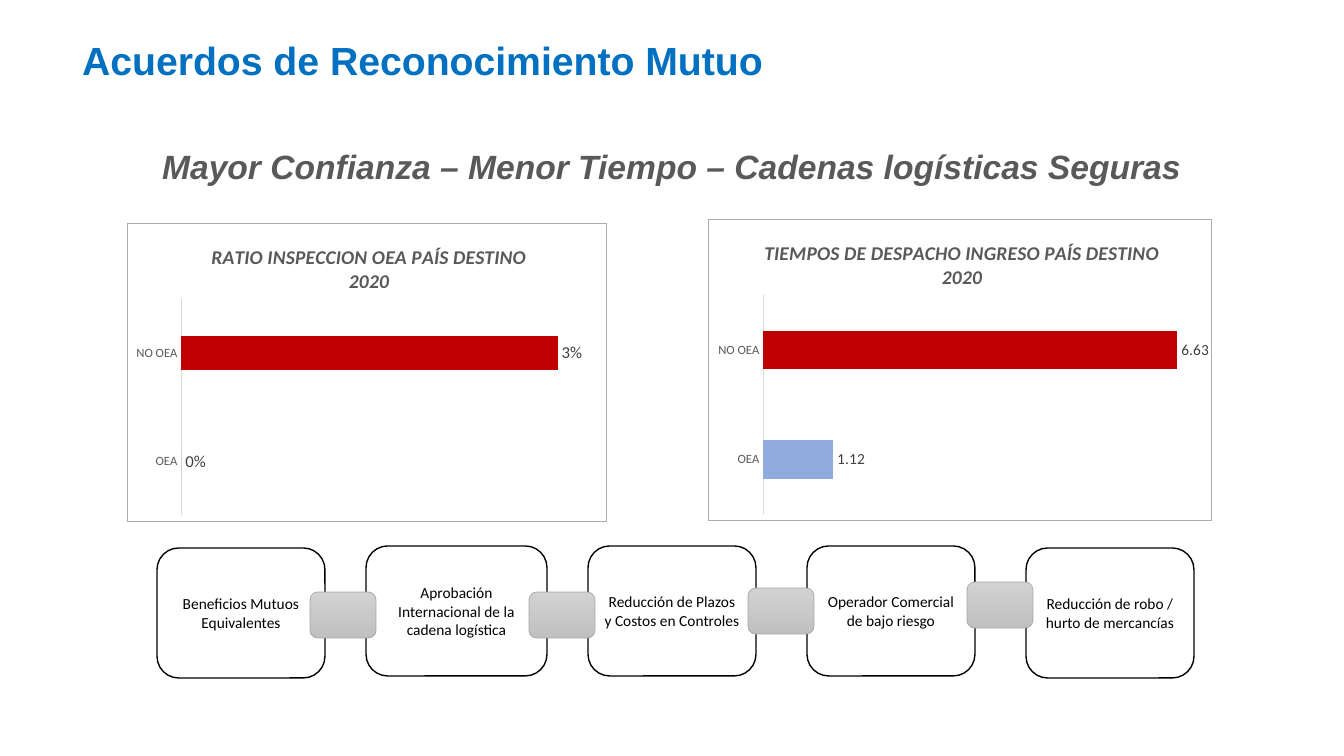
from dataclasses import dataclass

from lxml import etree
from pptx import Presentation
from pptx.chart.data import CategoryChartData
from pptx.dml.color import RGBColor
from pptx.enum.chart import XL_CHART_TYPE, XL_LABEL_POSITION, XL_TICK_MARK
from pptx.enum.shapes import MSO_SHAPE
from pptx.enum.text import MSO_ANCHOR, PP_ALIGN
from pptx.oxml import parse_xml
from pptx.oxml.ns import nsdecls, qn
from pptx.util import Pt

BAR = XL_CHART_TYPE.BAR_CLUSTERED
OUTSIDE = XL_LABEL_POSITION.OUTSIDE_END
NO_TICK = XL_TICK_MARK.NONE
ROUND = MSO_SHAPE.ROUNDED_RECTANGLE
MIDDLE = MSO_ANCHOR.MIDDLE
LEFT, CENTER = PP_ALIGN.LEFT, PP_ALIGN.CENTER

BLACK = RGBColor(0x00, 0x00, 0x00)
WHITE = RGBColor(0xFF, 0xFF, 0xFF)
BLUE = RGBColor(0x00, 0x70, 0xC0)
PALE = RGBColor(0x8F, 0xAA, 0xDC)
RED = RGBColor(0xC0, 0x00, 0x00)
SLATE = RGBColor(0x59, 0x59, 0x59)
DARK = RGBColor(0x40, 0x40, 0x40)
AXIS = RGBColor(0xD9, 0xD9, 0xD9)
FRAME = RGBColor(0xAF, 0xAB, 0xAB)
EDGE = RGBColor(0xA5, 0xA5, 0xA5)
SHADES = RGBColor(0xD2, 0xD2, 0xD2), RGBColor(0xC0, 0xC0, 0xC0)

SCALE = 914400 / 100.8
STEP = 219


@dataclass(frozen=True)
class Area:
    x: int
    y: int
    w: int
    h: int

    def emu(self) -> tuple[int, ...]:
        return tuple(round(n * SCALE) for n in (self.x, self.y, self.w, self.h))


@dataclass(frozen=True)
class Graph:
    area: Area
    plot: Area
    head: tuple[int, int]
    title: str
    values: tuple[float, float]
    top: float
    form: str
    gap: int
    size: int


@dataclass(frozen=True)
class Step:
    text: str
    area: Area


GRAPHS = (
    Graph(Area(127, 223, 480, 299), Area(181, 299, 415, 217), (208, 240),
          "RATIO INSPECCION OEA PAÍS DESTINO\n2020",
          (0, 0.03), 0.033, "0%", 219, 12),
    Graph(Area(708, 219, 504, 302), Area(763, 295, 438, 220), (761, 236),
          "TIEMPOS DE DESPACHO INGRESO PAÍS DESTINO\n2020",
          (1.12, 6.63), 7, "General", 182, 11),
)
STEPS = (
    Step("Beneficios Mutuos Equivalentes", Area(157, 548, 168, 130)),
    Step("Aprobación Internacional de la cadena logística",
         Area(366, 546, 181, 130)),
    Step("Reducción de Plazos y Costos en Controles",
         Area(588, 546, 168, 130)),
    Step("Operador Comercial de bajo riesgo",
         Area(588 + STEP, 546, 168, 130)),
    Step("Reducción de robo / hurto de mercancías",
         Area(588 + 2 * STEP, 548, 168, 130)),
)
LINKS = tuple(Area(310 + i * STEP, y, 66, 46)
              for i, y in enumerate((592, 592, 588, 582)))


def style(font, name: str, size: int, color: RGBColor,
          bold: bool = False, italic: bool = False) -> None:
    font.name, font.size = name, Pt(size)
    font.bold, font.italic = bold, italic
    font.color.rgb = color


def write(shape, text: str, align, *look) -> None:
    """Put one styled paragraph, centred in height, into a shape."""
    frame = shape.text_frame
    frame.word_wrap = True
    frame.vertical_anchor = MIDDLE
    frame.text = text
    para = frame.paragraphs[0]
    para.alignment = align
    for run in para.runs:
        style(run.font, *look)


def place(node, area: Area, x: int, y: int, plot: Area | None = None) -> None:
    """Fix the layout of a chart part as fractions of the chart area."""
    items = [("xMode", "edge"), ("yMode", "edge"),
             ("x", (x - area.x) / area.w), ("y", (y - area.y) / area.h)]
    if plot:
        items.insert(0, ("layoutTarget", "inner"))
        items += [("w", plot.w / area.w), ("h", plot.h / area.h)]
    for old in node.findall(qn("c:layout")):
        node.remove(old)
    layout = etree.Element(qn("c:layout"))
    manual = etree.SubElement(layout, qn("c:manualLayout"))
    for tag, value in items:
        etree.SubElement(manual, qn(f"c:{tag}")).set("val", str(value))
    text = node.find(qn("c:tx"))
    if text is None:
        node.insert(0, layout)
    else:
        text.addnext(layout)


def border(chart) -> None:
    chart.element.find(qn("c:chart")).addnext(parse_xml(
        f'<c:spPr {nsdecls("c", "a")}><a:solidFill><a:srgbClr val="{WHITE}"/>'
        f'</a:solidFill><a:ln w="{Pt(0.75)}"><a:solidFill>'
        f'<a:srgbClr val="{FRAME}"/></a:solidFill></a:ln></c:spPr>'))


def draw_graph(slide, graph: Graph) -> None:
    data = CategoryChartData(number_format=graph.form)
    data.categories = ["OEA", "NO OEA"]
    data.add_series("Series 1", graph.values)
    chart = slide.shapes.add_chart(BAR, *graph.area.emu(), data).chart
    style(chart.font, "Calibri", 10, BLACK)
    border(chart)
    chart.has_legend = False

    title = chart.chart_title
    title.text_frame.text = graph.title
    for para in title.text_frame.paragraphs:
        style(para.runs[0].font, "Calibri", 14, SLATE, True, True)
    place(title._element, graph.area, *graph.head)

    cats, vals = chart.category_axis, chart.value_axis
    cats.major_tick_mark = NO_TICK
    style(cats.tick_labels.font, "Calibri", 9, SLATE)
    cats.format.line.color.rgb = AXIS
    cats.format.line.width = Pt(0.75)
    vals.has_major_gridlines = False
    vals.minimum_scale, vals.maximum_scale = 0, graph.top
    vals.visible = False

    plot = chart.plots[0]
    plot.gap_width = graph.gap
    plot.vary_by_categories = False
    series = plot.series[0]
    for i, color in enumerate((PALE, RED)):
        fill = series.points[i].format.fill
        fill.solid()
        fill.fore_color.rgb = color
    labels = series.data_labels
    labels.show_value = True
    labels.position = OUTSIDE
    labels.number_format = graph.form
    labels.number_format_is_linked = False
    style(labels.font, "Calibri", graph.size, DARK)
    area = chart.element.find(f".//{qn('c:plotArea')}")
    place(area, graph.area, graph.plot.x, graph.plot.y, graph.plot)


def add_box(slide, area: Area, color: RGBColor, width: float):
    box = slide.shapes.add_shape(ROUND, *area.emu())
    box.shadow.inherit = False
    box.line.color.rgb = color
    box.line.width = Pt(width)
    return box


def draw_step(slide, step: Step) -> None:
    box = add_box(slide, step.area, BLACK, 1)
    box.fill.solid()
    box.fill.fore_color.rgb = WHITE
    write(box, step.text, CENTER, "Calibri", 11, BLACK)


def draw_link(slide, area: Area) -> None:
    fill = add_box(slide, area, EDGE, 0.5).fill
    fill.gradient()
    fill.gradient_angle = 270
    for stop, shade in zip(fill.gradient_stops, SHADES):
        stop.color.rgb = shade


def main() -> None:
    deck = Presentation()
    deck.slide_width, deck.slide_height = Area(0, 0, 1344, 756).emu()[2:]
    slide = deck.slides.add_slide(deck.slide_layouts[5])
    title = slide.shapes.title
    title.left, title.top, title.width, title.height = Area(
        72, 39, 727, 48).emu()
    write(title, "Acuerdos de Reconocimiento Mutuo", LEFT,
          "Arial", 28, BLUE, True)
    for graph in GRAPHS:
        draw_graph(slide, graph)
    motto = slide.shapes.add_textbox(*Area(142, 146, 1059, 46).emu())
    write(motto, "Mayor Confianza – Menor Tiempo – Cadenas logísticas Seguras",
          CENTER, "Arial", 24, SLATE, True, True)
    for shape in (title, motto):
        shape.text_frame.paragraphs[0].line_spacing = 0.9
    for step in STEPS:
        draw_step(slide, step)
    for link in LINKS:
        draw_link(slide, link)
    deck.save("out.pptx")


if __name__ == "__main__":
    main()
